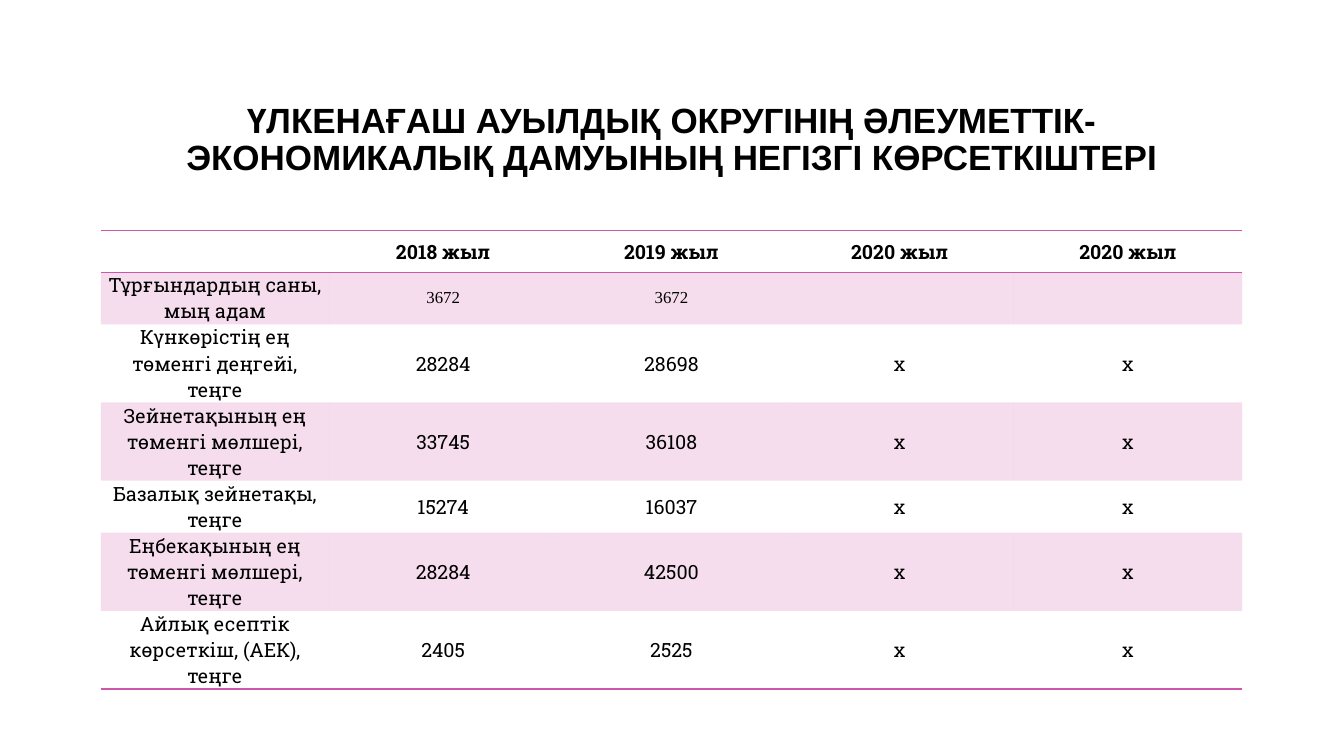
import pptx
import pptx.util
import pptx.dml.color
import pptx.enum.text
import pptx.oxml.ns
from lxml import etree
from pptx.util import Inches

PINK = "CE57AB"
BLACK = "000000"
LEFT, WIDTH = 1, 11.32
ROW_HEIGHT = 0.41
NO_GRID_STYLE = "{2D5ABB26-0587-4C30-8999-92F81FD0307C}"

ROWS = [
    ["", "2018 жыл", "2019 жыл", "2020 жыл", "2020 жыл"],
    ["Тұрғындардың саны, мың адам", "3672", "3672", "", ""],
    ["Күнкөрістің ең төменгі деңгейі, теңге", "28284", "28698", "х", "х"],
    ["Зейнетақының ең төменгі мөлшері, теңге", "33745", "36108", "х", "х"],
    ["Базалық зейнетақы, теңге", "15274", "16037", "х", "х"],
    ["Еңбекақының ең төменгі мөлшері, теңге", "28284", "42500", "х", "х"],
    ["Айлық есептік көрсеткіш, (АЕК), теңге", "2405", "2525", "х", "х"],
]


def rgb(color):
    return pptx.dml.color.RGBColor.from_string(color)


def sub(parent, tag, **attributes):
    return etree.SubElement(parent, pptx.oxml.ns.qn(tag), **attributes)


def add_run(p, text, size, font, bold=False):
    p.alignment = pptx.enum.text.PP_ALIGN.CENTER
    r = p.add_run()
    r.text = text
    r.font.size = pptx.util.Pt(size)
    r.font.name = font
    r.font.bold = bold
    r.font.color.rgb = rgb(BLACK)


def set_title(s, text):
    title = s.shapes.title
    title.left, title.top = Inches(LEFT), Inches(0.67)
    title.width, title.height = Inches(WIDTH), Inches(1.45)
    tf = title.text_frame
    tf.word_wrap = True
    tf.auto_size = pptx.enum.text.MSO_AUTO_SIZE.NONE
    tf.vertical_anchor = pptx.enum.text.MSO_ANCHOR.MIDDLE
    p = tf.paragraphs[0]
    p.line_spacing = 0.9
    add_run(p, text, 25, "Arial", bold=True)


def add_border(cell, side):
    line = sub(cell._tc.get_or_add_tcPr(), "a:ln" + side, w=str(pptx.util.Pt(1)))
    sub(sub(line, "a:solidFill"), "a:srgbClr", val=PINK)


def fill_cell(cell, banded):
    if not banded:
        cell.fill.background()
        return
    cell.fill.solid()
    cell.fill.fore_color.rgb = rgb(PINK)
    color = cell._tc.tcPr.find(".//" + pptx.oxml.ns.qn("a:srgbClr"))
    sub(color, "a:alpha", val="20000")


def write_cell(cell, text, size, font, bold):
    cell.vertical_anchor = pptx.enum.text.MSO_ANCHOR.MIDDLE
    cell.margin_left = cell.margin_right = Inches(0.07)
    cell.margin_top = cell.margin_bottom = 0
    add_run(cell.text_frame.paragraphs[0], text, size, font, bold)


def add_indicator_table(s, rows):
    n_rows, n_cols = len(rows), len(rows[0])
    frame = s.shapes.add_table(n_rows, n_cols, Inches(LEFT), Inches(2.29),
                               Inches(WIDTH), Inches(ROW_HEIGHT * n_rows))
    table = frame.table
    table.horz_banding = table.first_row = False
    style = table._tbl.tblPr.find(pptx.oxml.ns.qn("a:tableStyleId"))
    style.text = NO_GRID_STYLE

    for i, row in enumerate(rows):
        table.rows[i].height = Inches(ROW_HEIGHT)
        for j, text in enumerate(row):
            cell = table.cell(i, j)
            # Rules above and below the header and under the last row
            if i == 0:
                add_border(cell, "T")
            if i in (0, n_rows - 1):
                add_border(cell, "B")
            fill_cell(cell, banded=i % 2 == 1)
            if text:
                # The population figures are set smaller
                population = i == 1 and j > 0
                size, font = (12, "Times New Roman") if population else (14, "Roboto Slab")
                write_cell(cell, text, size, font, bold=i == 0)


def main():
    prs = pptx.Presentation()
    prs.slide_width, prs.slide_height = Inches(13.33), Inches(7.5)
    s = prs.slides.add_slide(prs.slide_layouts[5])

    # Heading
    set_title(s, "ҮЛКЕНАҒАШ АУЫЛДЫҚ ОКРУГІНІҢ ӘЛЕУМЕТТІК-"
                 "ЭКОНОМИКАЛЫҚ ДАМУЫНЫҢ НЕГІЗГІ КӨРСЕТКІШТЕРІ")

    # Indicators by year
    add_indicator_table(s, ROWS)

    prs.save("out.pptx")


if __name__ == "__main__":
    main()
